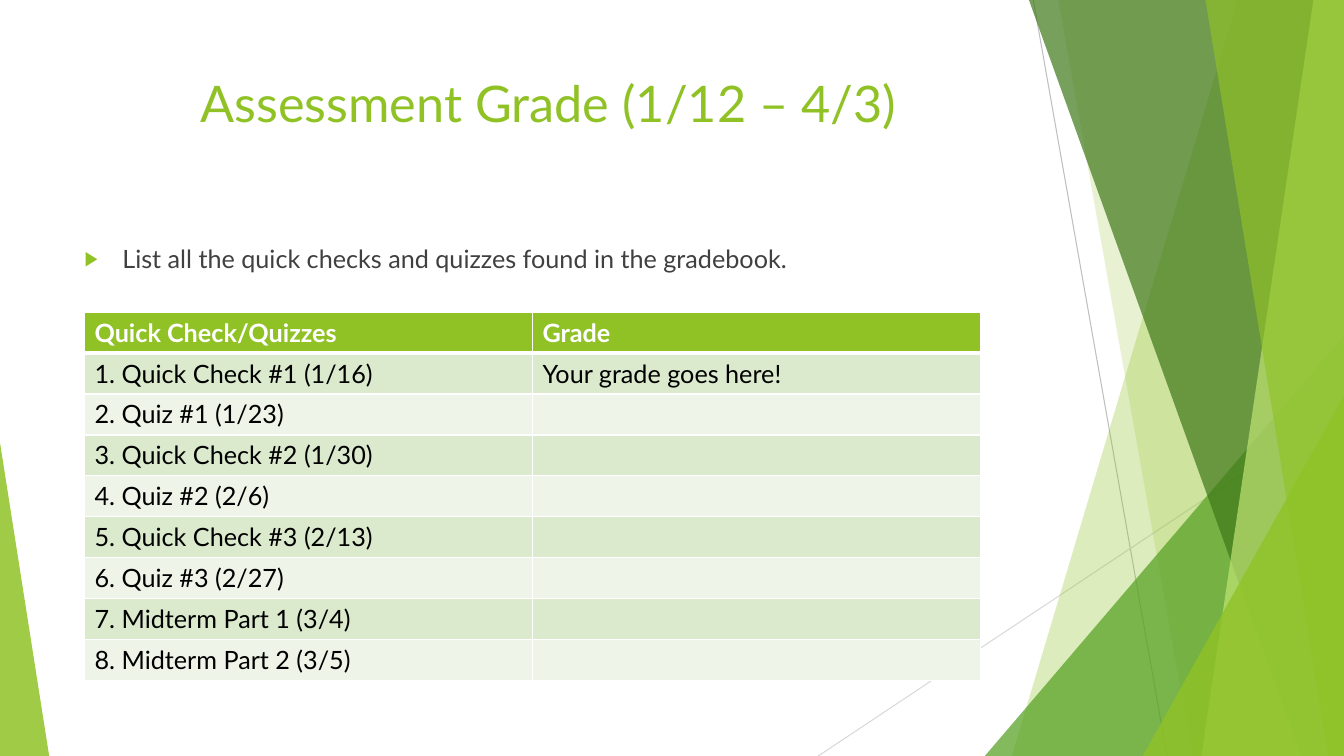
import pptx
import pptx.util
import pptx.dml.color
import pptx.enum.shapes
import pptx.enum.text
import pptx.oxml
import pptx.oxml.ns
from dataclasses import dataclass

Cm = pptx.util.Cm
Pt = pptx.util.Pt


@dataclass(frozen=True)
class Theme:
    font: str = "Lato"
    title_size: int = 36
    text_size: int = 18
    green: str = "90C226"
    leaf: str = "54A021"
    forest: str = "3F7819"
    lime: str = "C0E474"
    grey: str = "BFBFBF"
    pale_grey: str = "D9D9D9"
    white: str = "FFFFFF"
    black: str = "000000"
    text: str = "404040"
    odd_row: str = "DBE9CD"
    even_row: str = "EEF4E8"


theme = Theme()


def style(para, size, color, bold=False):
    for span in para.runs:
        span.font.name = theme.font
        span.font.size = Pt(size)
        span.font.bold = bold
        span.font.color.rgb = pptx.dml.color.RGBColor.from_string(color)


def add_xml(parent, markup):
    namespace = pptx.oxml.ns.nsdecls("a")
    parent.append(pptx.oxml.parse_xml(markup.replace("NS", namespace, 1)))


WIDTH, HEIGHT = 33.87, 19.05
deck = pptx.Presentation()
deck.slide_width = Cm(WIDTH)
deck.slide_height = Cm(HEIGHT)
page = deck.slides.add_slide(deck.slide_layouts[1])

rays = [
    ((26.04, 0), (29.41, HEIGHT), theme.grey),
    ((WIDTH, 10.24), (20.62, HEIGHT), theme.pale_grey),
]
for start, end, color in rays:
    ray = page.shapes.add_connector(
        pptx.enum.shapes.MSO_CONNECTOR.STRAIGHT, *map(Cm, start + end)
    )
    ray.line.width = Pt(0.75)
    ray.line.color.rgb = pptx.dml.color.RGBColor.from_string(color)
    add_xml(ray._element.spPr, "<a:effectLst NS/>")

facets = [
    ("band", (31.19, 25.5), theme.green, 30),
    ("band", (26.67, 30.05), theme.green, 20),
    ("triangle", (24.82, 8.46, 9.05, 1), theme.leaf, 72),
    ("band", (25.93, 32.79), theme.forest, 70),
    ("band", (33.1, 30.28), theme.lime, 70),
    ("band", (30.38, 33.48), theme.green, 65),
    ("triangle", (28.8, 9.98, 5.07, 1), theme.green, 80),
    ("triangle", (0, 11.15, 1.24, 0), theme.green, 85),
]
for kind, place, color, opacity in facets:
    if kind == "band":
        top_x, bottom_x = place
        outline = page.shapes.build_freeform(Cm(top_x), 0)
        corners = [(WIDTH, 0), (WIDTH, HEIGHT), (bottom_x, HEIGHT)]
        outline.add_line_segments([(Cm(x), Cm(y)) for x, y in corners], close=True)
        facet = outline.convert_to_shape()
    else:
        left, top, width, apex = place
        facet = page.shapes.add_shape(
            pptx.enum.shapes.MSO_SHAPE.ISOSCELES_TRIANGLE,
            Cm(left), Cm(top), Cm(width), Cm(HEIGHT - top),
        )
        facet.adjustments[0] = apex
    facet.shadow.inherit = False
    facet.line.fill.background()
    facet.fill.solid()
    facet.fill.fore_color.rgb = pptx.dml.color.RGBColor.from_string(color)
    tint = facet._element.spPr.find(".//" + pptx.oxml.ns.qn("a:srgbClr"))
    add_xml(tint, f'<a:alpha NS val="{opacity * 1000}"/>')

title = page.shapes.title
body = page.placeholders[1]
texts = [
    (title, 1.7, 3.66, "Assessment Grade (1/12 – 4/3)", theme.title_size, theme.green),
    (body, 6, 10.77, "List all the quick checks and quizzes found in the gradebook.",
     theme.text_size, theme.text),
]
for box, top, height, words, size, color in texts:
    box.left, box.top, box.width, box.height = Cm(1.88), Cm(top), Cm(23.88), Cm(height)
    box.text_frame.text = words
    box.text_frame.word_wrap = True
    box.text_frame.auto_size = pptx.enum.text.MSO_AUTO_SIZE.NONE
    box.text_frame.vertical_anchor = pptx.enum.text.MSO_ANCHOR.TOP
    style(box.text_frame.paragraphs[0], size, color)
title.text_frame.paragraphs[0].alignment = pptx.enum.text.PP_ALIGN.CENTER

bullet_para = body.text_frame.paragraphs[0]
bullet_para.space_before = Pt(10)
bullet = bullet_para._p.get_or_add_pPr()
bullet.set("marL", str(Cm(0.95)))
bullet.set("indent", str(Cm(-0.95)))
add_xml(bullet, f'<a:buClr NS><a:srgbClr val="{theme.green}"/></a:buClr>')
add_xml(bullet, '<a:buSzPct NS val="80000"/>')
add_xml(bullet, '<a:buChar NS char="▶"/>')

rows = [
    ("Quick Check/Quizzes", "Grade"),
    ("1. Quick Check #1 (1/16)", "Your grade goes here!"),
    ("2. Quiz #1 (1/23)", ""),
    ("3. Quick Check #2 (1/30)", ""),
    ("4. Quiz #2 (2/6)", ""),
    ("5. Quick Check #3 (2/13)", ""),
    ("6. Quiz #3 (2/27)", ""),
    ("7. Midterm Part 1 (3/4)", ""),
    ("8. Midterm Part 2 (3/5)", ""),
]
grades = page.shapes.add_table(
    len(rows), 2, Cm(2.13), Cm(7.87), Cm(22.58), Cm(1.03 * len(rows))
).table
for row_index, row in enumerate(rows):
    header = row_index == 0
    fill = theme.green if header else (theme.even_row, theme.odd_row)[row_index % 2]
    for column_index, words in enumerate(row):
        cell = grades.cell(row_index, column_index)
        cell.text_frame.text = words
        style(cell.text_frame.paragraphs[0], theme.text_size,
              theme.white if header else theme.black, header)
        for side in "LRTB":
            thick = (row_index, side) in [(0, "B"), (1, "T")]
            add_xml(
                cell._tc.get_or_add_tcPr(),
                f'<a:ln{side} NS w="{Pt(3 if thick else 1)}"><a:solidFill>'
                f'<a:srgbClr val="{theme.white}"/></a:solidFill></a:ln{side}>',
            )
        cell.fill.solid()
        cell.fill.fore_color.rgb = pptx.dml.color.RGBColor.from_string(fill)

deck.save("out.pptx")
